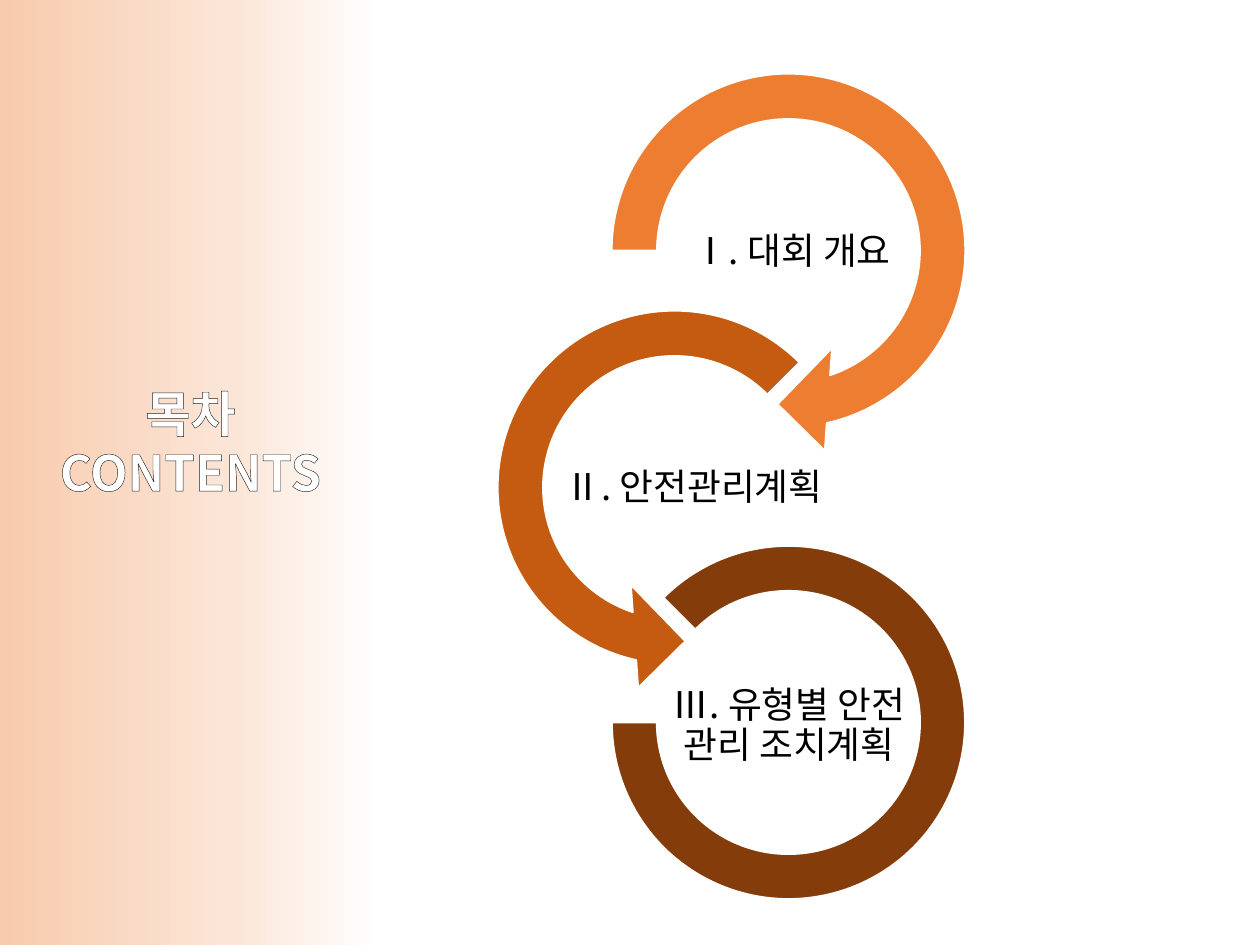
from dataclasses import dataclass

from lxml.etree import SubElement
from pptx import Presentation
from pptx.dml.color import RGBColor
from pptx.enum.shapes import MSO_SHAPE
from pptx.enum.text import MSO_ANCHOR, MSO_AUTO_SIZE, PP_ALIGN
from pptx.oxml import parse_xml
from pptx.oxml.ns import nsdecls, qn
from pptx.util import Emu, Pt


@dataclass(frozen=True)
class Theme:
    font: str = "Noto Sans CJK KR"
    title_size: int = 28
    label_size: int = 21
    white: str = "FFFFFF"
    ink: str = "000000"
    outline: str = "262626"
    ring_colors: tuple = ("ED7D31", "C55A11", "843C0B")
    band_stops: tuple = ((0, "FFFFFF"), (40, "FBE5D6"), (100, "F8CBAD"))


THEME = Theme()
EMU_PER_PX = 914400 / 126


def px(n):
    return Emu(round(n * EMU_PER_PX))


def rgb(value):
    return RGBColor.from_string(value)


def add_preset(slide, kind, box):
    sp = slide.shapes.add_shape(kind, *map(px, box))
    sp.shadow.inherit = False
    return sp


def add_text(slide, box):
    tf = slide.shapes.add_textbox(*map(px, box)).text_frame
    tf.word_wrap = True
    return tf


def style_run(r, size, color, bold=False):
    r.font.name = THEME.font
    r.font.size = Pt(size)
    r.font.bold = bold
    r.font.color.rgb = rgb(color)
    SubElement(r.font._element, qn("a:ea"), typeface=THEME.font)


def outline_run(r, color):
    ln = parse_xml(
        f'<a:ln {nsdecls("a")} w="9525"><a:solidFill>'
        f'<a:srgbClr val="{color}"/></a:solidFill></a:ln>'
    )
    r.font._element.insert(0, ln)


def add_ring(slide, kind, box, adjustments, color):
    sp = add_preset(slide, kind, box)
    for i, value in enumerate(adjustments):
        sp.adjustments[i] = value
    sp.fill.solid()
    sp.fill.fore_color.rgb = rgb(color)
    sp.line.color.rgb = rgb(THEME.white)
    sp.line.width = Pt(1)


def add_label(slide, box, text):
    tf = add_text(slide, box)
    tf.vertical_anchor = MSO_ANCHOR.MIDDLE
    tf.margin_left = tf.margin_right = tf.margin_top = tf.margin_bottom = px(1)
    p = tf.paragraphs[0]
    p.text = text
    p.alignment = PP_ALIGN.CENTER
    p.line_spacing = 0.9
    after = SubElement(p._p.get_or_add_pPr(), qn("a:spcAft"))
    SubElement(after, qn("a:spcPct"), val="35000")
    style_run(p.runs[0], THEME.label_size, THEME.ink)


def add_contents_chain(slide, x, y):
    steps = (
        (MSO_SHAPE.CIRCULAR_ARROW, (114, 0, 411, 411),
         (0.11, 11.423, 45, 108, 0.125), (186, 150, 273, 115), "Ⅰ. 대회 개요"),
        (MSO_SHAPE.LEFT_CIRCULAR_ARROW, (0, 237, 411, 411),
         (0.11, 11.423, 63, 189, 0.125), (51, 386, 347, 115), "Ⅱ. 안전관리계획"),
        (MSO_SHAPE.BLOCK_ARC, (143, 501, 353, 353),
         (135, 108, 0.127), (186, 624, 268, 115), "Ⅲ. 유형별 안전 관리 조치계획"),
    )
    for (kind, ring, adjustments, label, text), color in zip(steps, THEME.ring_colors):
        ring_box, label_box = ((x + l, y + t, w, h) for l, t, w, h in (ring, label))
        add_ring(slide, kind, ring_box, adjustments, color)
        add_label(slide, label_box, text)


def add_title_band(slide, x, y, w, h):
    sp = add_preset(slide, MSO_SHAPE.RECTANGLE, (x, y, w, h))
    sp.line.fill.background()
    sp.fill.gradient()
    sp.fill.gradient_angle = 180
    stops = sp._element.spPr.find(qn("a:gradFill")).find(qn("a:gsLst"))
    for gs in list(stops):
        stops.remove(gs)
    for position, color in THEME.band_stops:
        gs = SubElement(stops, qn("a:gs"), pos=str(position * 1000))
        SubElement(gs, qn("a:srgbClr"), val=color)

    tf = add_text(slide, (x + 28, y + 377, w - 56, 131))
    tf.auto_size = MSO_AUTO_SIZE.SHAPE_TO_FIT_TEXT
    tf.text = "목차\nCONTENTS"
    for p in tf.paragraphs:
        p.alignment = PP_ALIGN.CENTER
        style_run(p.runs[0], THEME.title_size, THEME.white, bold=True)
        outline_run(p.runs[0], THEME.outline)


def main():
    prs = Presentation()
    prs.slide_width, prs.slide_height = px(1260), px(945)
    slide = prs.slides.add_slide(prs.slide_layouts[6])
    add_contents_chain(slide, 469, 45)
    add_title_band(slide, 0, 0, 381, 945)
    prs.save("out.pptx")


if __name__ == "__main__":
    main()
